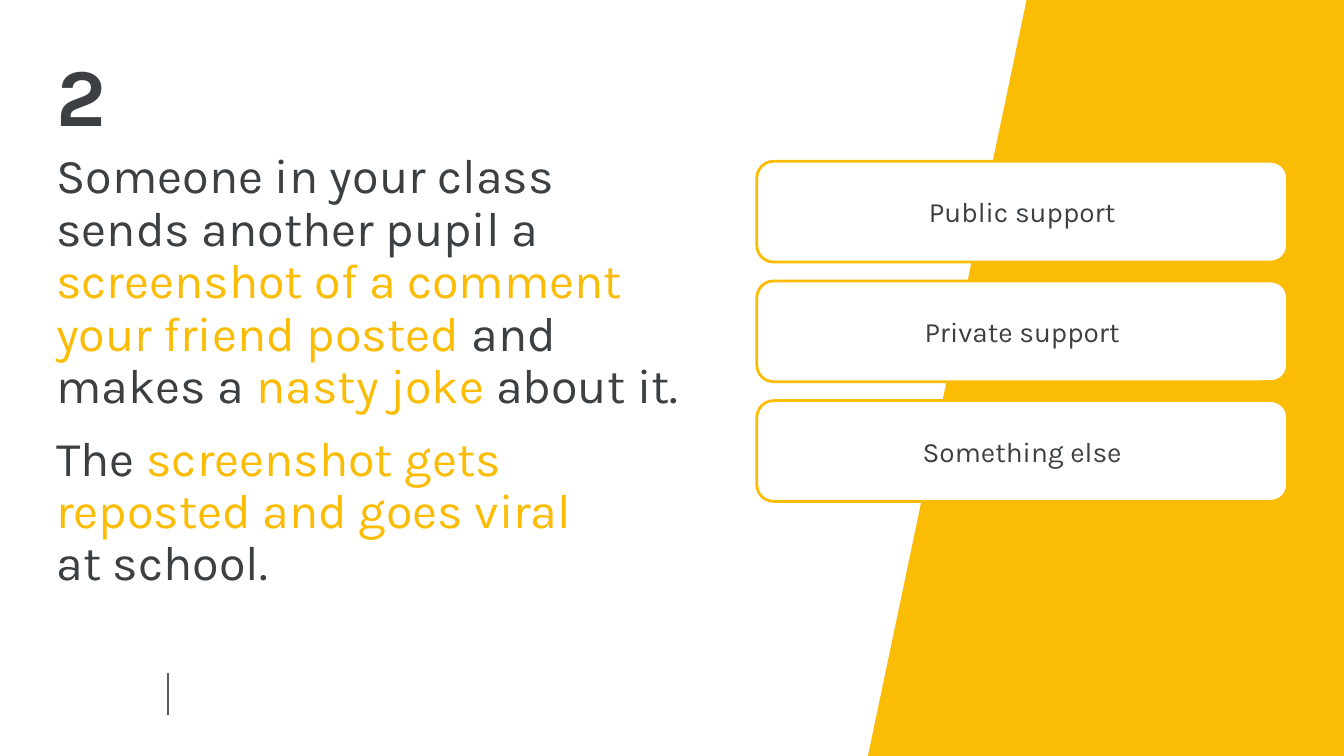
"""Build the second scenario slide with its three answer cards."""
from lxml import etree
from pptx import Presentation
from pptx.dml.color import RGBColor
from pptx.enum import shapes, text
from pptx.oxml import ns
from pptx.util import Pt

INK, YELLOW, WHITE, GREY = "3C4043", "FBBC05", "FFFFFF", "595959"


def colour(value):
    return RGBColor.from_string(value)


class Style:
    font = "Karla"

    def __init__(self, deck):
        self.page = deck.slides.add_slide(deck.slide_layouts[3])

    def add_span(self, para, words, size, ink=INK, bold=False):
        span = para.add_run()
        span.text = words
        span.font.name = self.font
        span.font.size = Pt(size)
        span.font.bold = bold
        span.font.color.rgb = colour(ink)

    def fill_placeholder(self, index, frame, lines, size, bold=False):
        box = self.page.placeholders[index]
        box.left, box.top, box.width, box.height = map(Pt, frame)
        area = box.text_frame
        area.margin_left = area.margin_right = area.margin_top = area.margin_bottom = 0
        area.vertical_anchor = text.MSO_ANCHOR.TOP
        area.auto_size = text.MSO_AUTO_SIZE.NONE
        area.word_wrap = True
        para = area.paragraphs[0]
        para.alignment = text.PP_ALIGN.LEFT
        para.line_spacing = 0.9
        para.space_before = Pt(0)
        settings = para._p.get_or_add_pPr()
        settings.set("marL", "0")
        settings.set("indent", "0")
        etree.SubElement(settings, ns.qn("a:buNone"))
        for number, line in enumerate(lines):
            if number:
                para.add_line_break()
            for words, ink in line:
                self.add_span(para, words, size, ink, bold)

    def card(self, frame, label):
        box = self.page.shapes.add_shape(
            shapes.MSO_SHAPE.ROUNDED_RECTANGLE, *map(Pt, frame))
        box.adjustments[0] = 0.167
        box.shadow.inherit = False
        box.fill.solid()
        box.fill.fore_color.rgb = colour(WHITE)
        box.line.color.rgb = colour(YELLOW)
        box.line.width = Pt(1.5)
        area = box.text_frame
        area.word_wrap = True
        area.vertical_anchor = text.MSO_ANCHOR.MIDDLE
        para = area.paragraphs[0]
        para.alignment = text.PP_ALIGN.CENTER
        self.add_span(para, label, 15)

    def panel(self, points, fill):
        corners = [(Pt(x), Pt(y)) for x, y in points]
        builder = self.page.shapes.build_freeform(*corners[0])
        builder.add_line_segments(corners[1:], close=True)
        shape = builder.convert_to_shape()
        shape.shadow.inherit = False
        shape.fill.solid()
        shape.fill.fore_color.rgb = colour(fill)
        shape.line.fill.background()

    def rule(self, start, end):
        line = self.page.shapes.add_connector(
            shapes.MSO_CONNECTOR.STRAIGHT, *map(Pt, start + end))
        line.line.color.rgb = colour(GREY)
        line.line.width = Pt(0.75)
        etree.SubElement(line._element.spPr, ns.qn("a:effectLst"))


def main():
    deck = Presentation()
    deck.slide_width, deck.slide_height = Pt(720), Pt(405)
    style = Style(deck)
    style.rule((90, 360.7), (90, 383))
    style.panel([(720, 405), (465, 405), (550, 0), (720, 0)], YELLOW)
    style.fill_placeholder(0, (30.2, 29.5, 209.5, 54), [[("2", INK)]], 44, True)
    style.fill_placeholder(1, (30.2, 81.4, 338.4, 141.8), [[
        ("Someone in your class sends another pupil a ", INK),
        ("screenshot of a comment your friend posted", YELLOW),
        (" and makes a ", INK),
        ("nasty joke", YELLOW),
        (" about it.", INK),
    ]], 26)
    style.fill_placeholder(2, (30.2, 232.6, 329.8, 85), [
        [("The ", INK), ("screenshot gets reposted and goes viral", YELLOW)],
        [("at school.", INK)],
    ], 26)
    for row, label in enumerate(("Public support", "Private support", "Something else")):
        style.card((405.4, 86.4 + 64.1 * row, 284.4, 54), label)
    deck.save("out.pptx")


if __name__ == "__main__":
    main()
